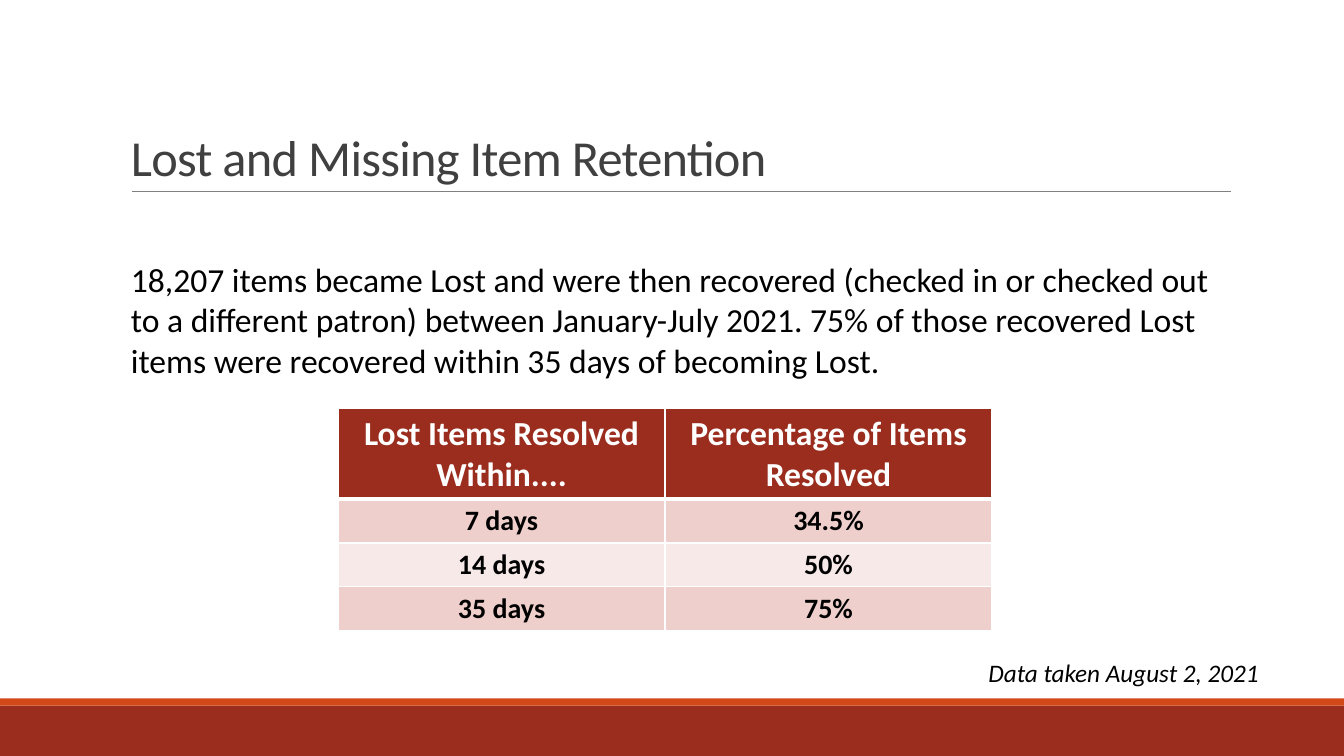
from typing import NamedTuple

from lxml import etree
from pptx import Presentation
from pptx.dml.color import RGBColor
from pptx.enum import shapes, text
from pptx.oxml import ns
from pptx.util import Cm, Pt

HUES = {
    "brick": "9B2D1F", "orange": "D34817", "rule": "808080",
    "title": "404040", "black": "000000", "white": "FFFFFF",
    "rose": "EFCFCC", "blush": "F7E9E8",
}
FONT = "Calibri"
WIDE, HIGH = 33.87, 19.05


class Band(NamedTuple):
    top: float
    high: float
    hue: str


class Note(NamedTuple):
    words: str
    left: float
    top: float
    wide: float
    high: float
    size: int
    hue: str = "black"
    slant: bool = False


BANDS = [Band(17.78, 1.27, "brick"), Band(17.6, 0.18, "orange")]
TITLE = Note("Lost and Missing Item Retention", 3.05, 0.79, 27.94, 4.04, 36, "title")
BODY = Note(
    "18,207 items became Lost and were then recovered (checked in or checked "
    "out to a different patron) between January-July 2021. 75% of those "
    "recovered Lost items were recovered within 35 days of becoming Lost.",
    3.05, 6.4, 28.35, 5.89, 24)
DATE = Note("Data taken August 2, 2021", 24.66, 16.43, 7.62, 1.02, 18, slant=True)
ROWS = [
    ("Lost Items Resolved Within....", "Percentage of Items Resolved"),
    ("7 days", "34.5%"),
    ("14 days", "50%"),
    ("35 days", "75%"),
]


def color(hue: str) -> RGBColor:
    return RGBColor.from_string(HUES[hue])


def style(run, size: int, hue: str, bold: bool = False, slant: bool = False) -> None:
    font = run.font
    font.name, font.size = FONT, Pt(size)
    font.bold, font.italic = bold, slant
    font.color.rgb = color(hue)


def add_band(slide, band: Band) -> None:
    bar = slide.shapes.add_shape(
        shapes.MSO_SHAPE.RECTANGLE, 0, Cm(band.top), Cm(WIDE), Cm(band.high))
    bar.shadow.inherit = False
    bar.fill.solid()
    bar.fill.fore_color.rgb = color(band.hue)
    bar.line.fill.background()


def add_rule(slide) -> None:
    rule = slide.shapes.add_connector(
        shapes.MSO_CONNECTOR.STRAIGHT, Cm(3.33), Cm(4.83), Cm(31.01), Cm(4.83))
    rule.line.color.rgb = color("rule")
    rule.line.width = Pt(0.5)
    etree.SubElement(rule._element.spPr, ns.qn("a:effectLst"))


def add_note(slide, note: Note):
    box = slide.shapes.add_textbox(
        Cm(note.left), Cm(note.top), Cm(note.wide), Cm(note.high))
    frame = box.text_frame
    frame.word_wrap = True
    frame.text = note.words
    style(frame.paragraphs[0].runs[0], note.size, note.hue, slant=note.slant)
    return frame


def add_title(slide) -> None:
    frame = add_note(slide, TITLE)
    frame.vertical_anchor = text.MSO_ANCHOR.BOTTOM
    line = frame.paragraphs[0]
    line.line_spacing = 0.85
    line.runs[0]._r.get_or_add_rPr().set("spc", "-50")


def add_edges(cell, head: bool) -> None:
    props = cell._tc.get_or_add_tcPr()
    for spot, side in enumerate(("lnL", "lnR", "lnT", "lnB")):
        edge = etree.Element(ns.qn(f"a:{side}"))
        edge.set("w", str(Pt(3 if head and side == "lnB" else 1)))
        fill = etree.SubElement(edge, ns.qn("a:solidFill"))
        etree.SubElement(fill, ns.qn("a:srgbClr")).set("val", HUES["white"])
        props.insert(spot, edge)


def fill_cell(cell, words: str, row: int) -> None:
    head = row == 0
    cell.text = words
    line = cell.text_frame.paragraphs[0]
    line.alignment = text.PP_ALIGN.CENTER
    style(line.runs[0], 24 if head else 20, "white" if head else "black", bold=True)
    cell.fill.solid()
    cell.fill.fore_color.rgb = color(
        "brick" if head else "rose" if row % 2 else "blush")
    # The edge under the header is shared with the first data row
    add_edges(cell, head)
    if row == 1:
        top = cell._tc.tcPr.find(ns.qn("a:lnT"))
        top.set("w", str(Pt(3)))


def add_grid(slide) -> None:
    grid = slide.shapes.add_table(
        len(ROWS), len(ROWS[0]), Cm(8.52), Cm(10.29), Cm(16.48), Cm(5.59)).table
    for row, pair in enumerate(ROWS):
        grid.rows[row].height = Cm(1.1 if row else 2.29)
        for col, words in enumerate(pair):
            fill_cell(grid.cell(row, col), words, row)


def main() -> None:
    deck = Presentation()
    deck.slide_width, deck.slide_height = Cm(WIDE), Cm(HIGH)
    slide = deck.slides.add_slide(deck.slide_layouts[6])

    # Footer bands and title rule
    for band in BANDS:
        add_band(slide, band)
    add_rule(slide)

    # Title, text, table and date
    add_title(slide)
    add_note(slide, BODY)
    add_grid(slide)
    add_note(slide, DATE)

    deck.save("out.pptx")


if __name__ == "__main__":
    main()
